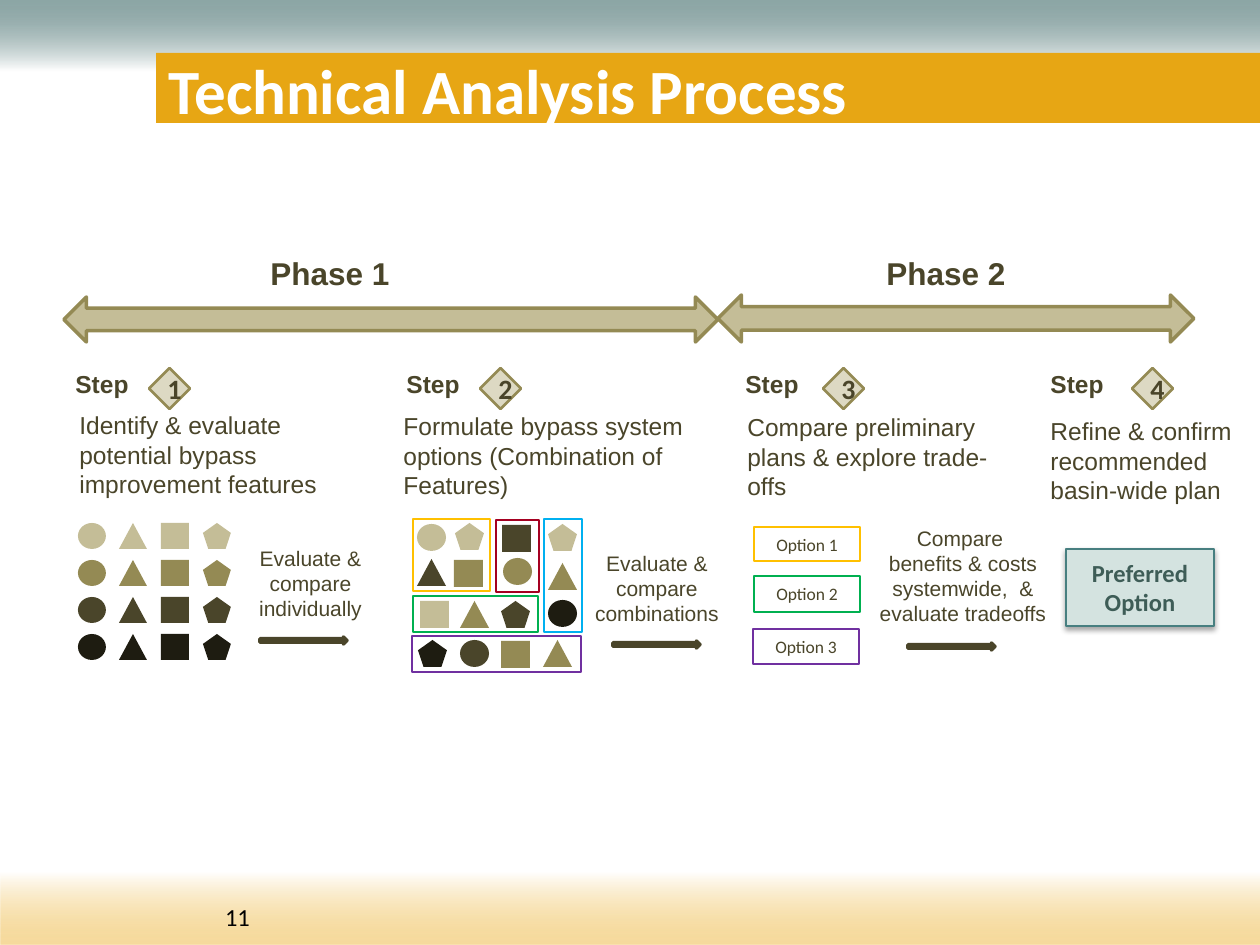
from lxml import etree
from pptx import Presentation
from pptx.dml.color import RGBColor
from pptx.enum.shapes import MSO_SHAPE
from pptx.enum.text import MSO_ANCHOR, MSO_AUTO_SIZE, PP_ALIGN
from pptx.oxml.ns import qn
from pptx.util import Emu, Pt

RECT, OVAL, DIAMOND = MSO_SHAPE.RECTANGLE, MSO_SHAPE.OVAL, MSO_SHAPE.DIAMOND
TRIANGLE, PENTAGON = MSO_SHAPE.ISOSCELES_TRIANGLE, MSO_SHAPE.REGULAR_PENTAGON
PROCESS = MSO_SHAPE.FLOWCHART_PROCESS
DOUBLE_ARROW, RIGHT_ARROW = MSO_SHAPE.LEFT_RIGHT_ARROW, MSO_SHAPE.RIGHT_ARROW
LEFT, CENTER = PP_ALIGN.LEFT, PP_ALIGN.CENTER
TOP, MIDDLE = MSO_ANCHOR.TOP, MSO_ANCHOR.MIDDLE

PX = 914400 / 126
SAND, OLIVE, BROWN, BLACK = "C4BD97", "948A54", "4A452A", "1E1C11"
YELLOW, GREEN, PURPLE = "FFC000", "00B050", "7030A0"
color = RGBColor.from_string

deck = Presentation()
deck.slide_width, deck.slide_height = Emu(round(1260 * PX)), Emu(round(945 * PX))
slide = deck.slides.add_slide(deck.slide_layouts[5])


def add_shape(kind, bounds, fill=None, line=None, weight=1.5):
    """Add a shape, or a text box when kind is None."""
    frame = [Emu(round(value * PX)) for value in bounds]
    if kind is None:
        return slide.shapes.add_textbox(*frame)
    shape = slide.shapes.add_shape(kind, *frame)
    shape.shadow.inherit = False
    if fill:
        shape.fill.solid()
        shape.fill.fore_color.rgb = color(fill)
    else:
        shape.fill.background()
    if line:
        shape.line.color.rgb = color(line)
        shape.line.width = Pt(weight)
    else:
        shape.line.fill.background()
    return shape


def write(shape, text, size, font="Arial", ink=BROWN, bold=False, align=LEFT, anchor=TOP):
    frame = shape.text_frame
    frame.word_wrap = True
    frame.auto_size = MSO_AUTO_SIZE.NONE
    frame.vertical_anchor = anchor
    frame.text = text
    para = frame.paragraphs[0]
    para.alignment = align
    for span in para.runs:
        for name, value in {"name": font, "size": Pt(size), "bold": bold}.items():
            setattr(span.font, name, value)
        span.font.color.rgb = color(ink)


# Fading bands at the top and the bottom
for bounds, tint, angle in [((-1, 0, 1264, 137), "215352", 270),
                            ((1, 805, 1259, 140), "EEB840", 90)]:
    band = add_shape(RECT, bounds)
    band.fill.gradient()
    band.fill.gradient_angle = angle
    for stop, place, hue in zip(band.fill.gradient_stops, (0, 0.52), (tint, "FFFFFF")):
        stop.position = place
        stop.color.rgb = color(hue)
    first_color = next(band._element.iter(qn("a:gs")))[0]
    etree.SubElement(first_color, qn("a:alpha"), val="51000")

# Title bar, title and page number
add_shape(RECT, (156, 53, 1104, 70), "E7A614")
title = slide.shapes.title
title.left, title.top, title.width, title.height = [
    Emu(round(value * PX)) for value in (156, 53, 1105, 73)]
write(title, "Technical Analysis Process", 36, "Calibri", "FFFFFF", True, anchor=MIDDLE)
slide.shapes._spTree.append(title._element)
write(add_shape(None, (184, 896, 107, 43)), "11", 14, "Calibri", "000000", align=CENTER)

# Phases
for name, label_left, arrow in [("Phase 1", 102, (64, 297, 654, 45)),
                                ("Phase 2", 718, (718, 295, 476, 47))]:
    add_shape(DOUBLE_ARROW, arrow, SAND, OLIVE, 2)
    write(add_shape(None, (label_left, 248, 456, 60)), name, 18, bold=True, align=CENTER)

# Steps: label left, diamond left, description bounds, description
steps = [
    (63, 149, (67, 404, 263, 102), "Identify & evaluate potential bypass improvement features"),
    (394, 480, (391, 405, 309, 102),
     "Formulate bypass system options (Combination of Features)"),
    (733, 823, (735, 406, 277, 102), "Compare preliminary plans & explore trade-offs"),
    (1038, 1132, (1038, 410, 222, 102), "Refine & confirm recommended basin-wide plan"),
]
for number, (label_left, diamond_left, bounds, description) in enumerate(steps, 1):
    write(add_shape(None, (label_left, 363, 97, 50)), "Step", 14, bold=True)
    diamond = add_shape(DIAMOND, (diamond_left, 368, 41, 41), "DDD9C3", OLIVE)
    write(diamond, str(number), 16, "Calibri", bold=True, align=CENTER, anchor=MIDDLE)
    write(add_shape(None, bounds), description, 14)

# Transitions between steps
transitions = [
    ((239, 539, 143, 91), "Evaluate & compare individually", (260, 637)),
    ((581, 544, 152, 91), "Evaluate & compare combinations", (613, 641)),
    ((865, 519, 196, 115), "Compare \vbenefits & costs systemwide,  & evaluate tradeoffs",
     (908, 643)),
]
for bounds, text, (left, top) in transitions:
    write(add_shape(PROCESS, bounds), text, 12, align=CENTER)
    add_shape(RIGHT_ARROW, (left, top, 87, 7), BROWN, BROWN, 2)

# Step 1: grid of features
for column, kind in enumerate((OVAL, TRIANGLE, RECT, PENTAGON)):
    for row, fill in enumerate((SAND, OLIVE, BROWN, BLACK)):
        add_shape(kind, (78 + column * 125 // 3, 523 + 37 * row, 28, 26), fill)

# Step 2: features combined in frames
features = [
    (OVAL, 417, 524, SAND), (PENTAGON, 455, 523, SAND),
    (TRIANGLE, 417, 559, BROWN), (RECT, 454, 560, OLIVE),
    (RECT, 502, 525, BROWN), (OVAL, 503, 558, OLIVE),
    (PENTAGON, 548, 524, SAND), (TRIANGLE, 548, 563, OLIVE), (OVAL, 548, 600, BLACK),
    (RECT, 420, 601, SAND), (TRIANGLE, 460, 601, OLIVE), (PENTAGON, 501, 601, BROWN),
    (PENTAGON, 418, 640, BLACK), (OVAL, 460, 640, BROWN),
    (RECT, 501, 641, OLIVE), (TRIANGLE, 543, 640, OLIVE),
]
for kind, left, top, fill in features:
    add_shape(kind, (left, top, 29, 27), fill)
for bounds, line in [((413, 519, 77, 72), YELLOW), ((496, 520, 43, 72), "A50021"),
                     ((544, 519, 38, 113), "00B0F0"), ((413, 596, 125, 36), GREEN),
                     ((412, 636, 169, 36), PURPLE)]:
    add_shape(RECT, bounds, line=line)

# Step 3: options
for number, (left, top, height, line) in enumerate(
        [(754, 527, 34, YELLOW), (754, 576, 36, GREEN), (753, 629, 35, PURPLE)], 1):
    option = add_shape(RECT, (left, top, 106, height), line=line)
    write(option, f"Option {number}", 10, "Calibri", align=CENTER, anchor=MIDDLE)

# Step 4: preferred option with a soft shadow
preferred = add_shape(RECT, (1066, 549, 148, 77), "D4E3E0", "477F80")
write(preferred, "Preferred Option", 14, "Calibri", "3E5D57", True, CENTER, MIDDLE)
effects = preferred._element.spPr.find(qn("a:effectLst"))
shadow = etree.SubElement(effects, qn("a:outerShdw"), blurRad=str(Pt(3.1)),
                          dist=str(Pt(1.8)), dir="5400000", rotWithShape="0")
shade = etree.SubElement(shadow, qn("a:srgbClr"), val="000000")
etree.SubElement(shade, qn("a:alpha"), val="35000")

deck.save("out.pptx")
